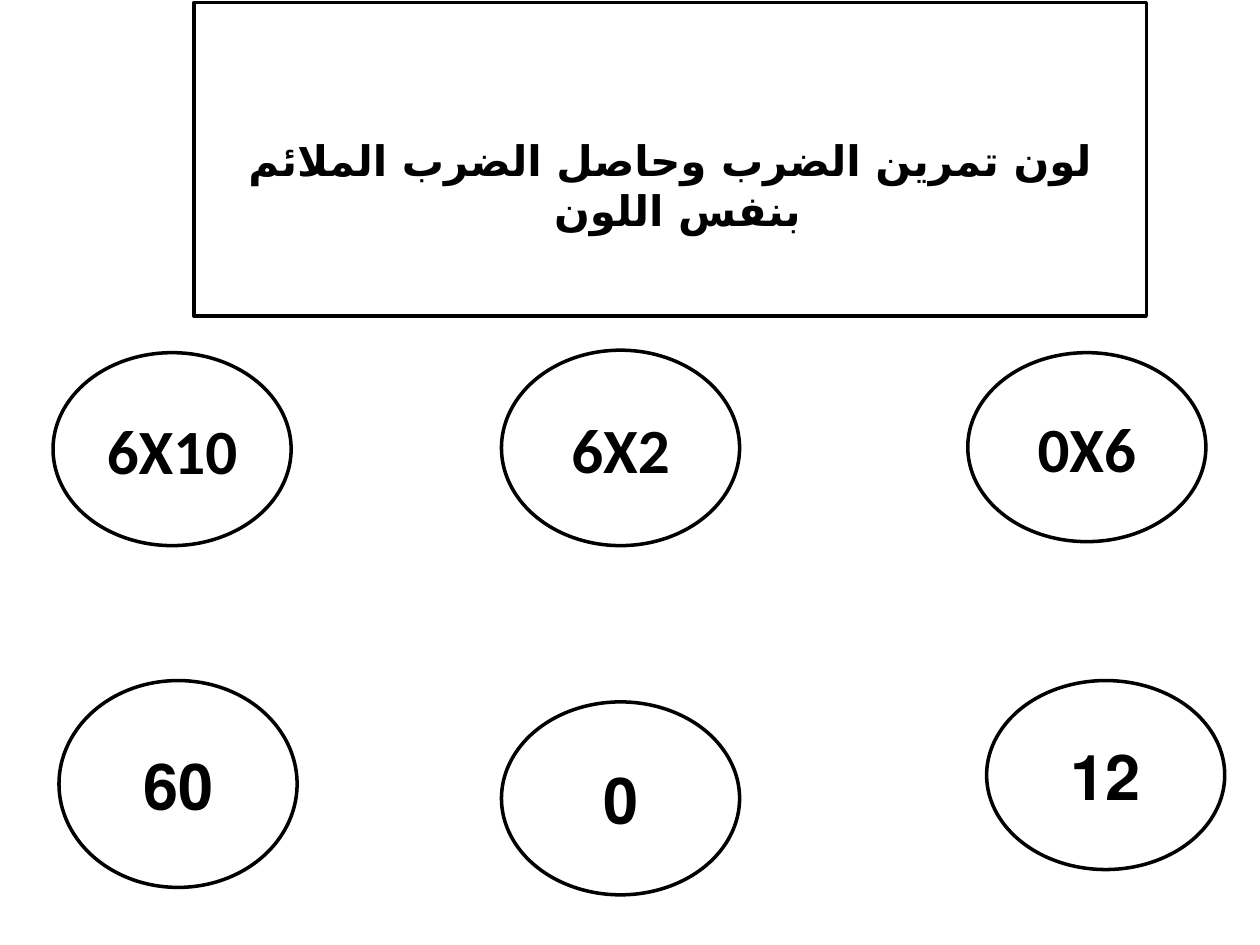
import lxml.etree
import pptx
import pptx.dml.color
import pptx.enum.shapes
import pptx.enum.text
import pptx.oxml.ns
import pptx.util

Cm = pptx.util.Cm
Pt = pptx.util.Pt
SHAPE = pptx.enum.shapes.MSO_SHAPE
BLACK = pptx.dml.color.RGBColor(0, 0, 0)
WHITE = pptx.dml.color.RGBColor(255, 255, 255)

TITLE = "لون تمرين الضرب وحاصل الضرب الملائم بنفس اللون "
TITLE_BOX = (3.91, 0.05, 19.2, 6.32)
CIRCLE_WIDTH = 4.8
EXERCISES = [
    ("6X10", 1.07, 0.05, 3.89),
    ("6X2", 10.11, 0, 3.94),
    ("0X6", 19.51, 0.05, 3.81),
]
PRODUCTS = [
    ("60", 1.19, 0, 4.17),
    ("0", 10.11, 0.43, 3.89),
    ("12", 19.89, 0, 3.81),
]


def write_text(frame, text, size, bold=True, color=BLACK, font="Calibri", arabic_font=None):
    frame.word_wrap = True
    frame.vertical_anchor = pptx.enum.text.MSO_ANCHOR.MIDDLE
    para = frame.paragraphs[0]
    para.alignment = pptx.enum.text.PP_ALIGN.CENTER
    para._p.get_or_add_pPr().set("rtl", "1")
    span = para.add_run()
    span.text = text
    span.font.size = Pt(size)
    span.font.bold = bold
    span.font.name = font
    span.font.color.rgb = color
    if arabic_font:
        properties = span._r.get_or_add_rPr()
        script = lxml.etree.SubElement(properties, pptx.oxml.ns.qn("a:cs"))
        script.set("typeface", arabic_font)


def add_outlined(page, kind, box):
    shape = page.shapes.add_shape(kind, *(Cm(length) for length in box))
    shape.shadow.inherit = False
    shape.fill.solid()
    shape.fill.fore_color.rgb = WHITE
    shape.line.color.rgb = BLACK
    shape.line.width = Pt(2)
    return shape


def add_title(page, box):
    frame = add_outlined(page, SHAPE.RECTANGLE, box).text_frame
    frame.margin_top = Cm(1.14)
    write_text(frame, TITLE, size=24, arabic_font="DejaVu Sans")


def add_circle_row(page, left, top, circles):
    for text, across, down, height in circles:
        box = (left + across, top + down, CIRCLE_WIDTH, height)
        circle = add_outlined(page, SHAPE.OVAL, box)
        write_text(circle.text_frame, text, size=36)


def main():
    deck = pptx.Presentation()
    deck.slide_width = Cm(25.4)
    deck.slide_height = Cm(19.05)
    page = deck.slides.add_slide(deck.slide_layouts[6])
    add_title(page, TITLE_BOX)
    add_circle_row(page, 0, 7.06, EXERCISES)
    add_circle_row(page, 0, 13.72, PRODUCTS)
    deck.save("out.pptx")


if __name__ == "__main__":
    main()
